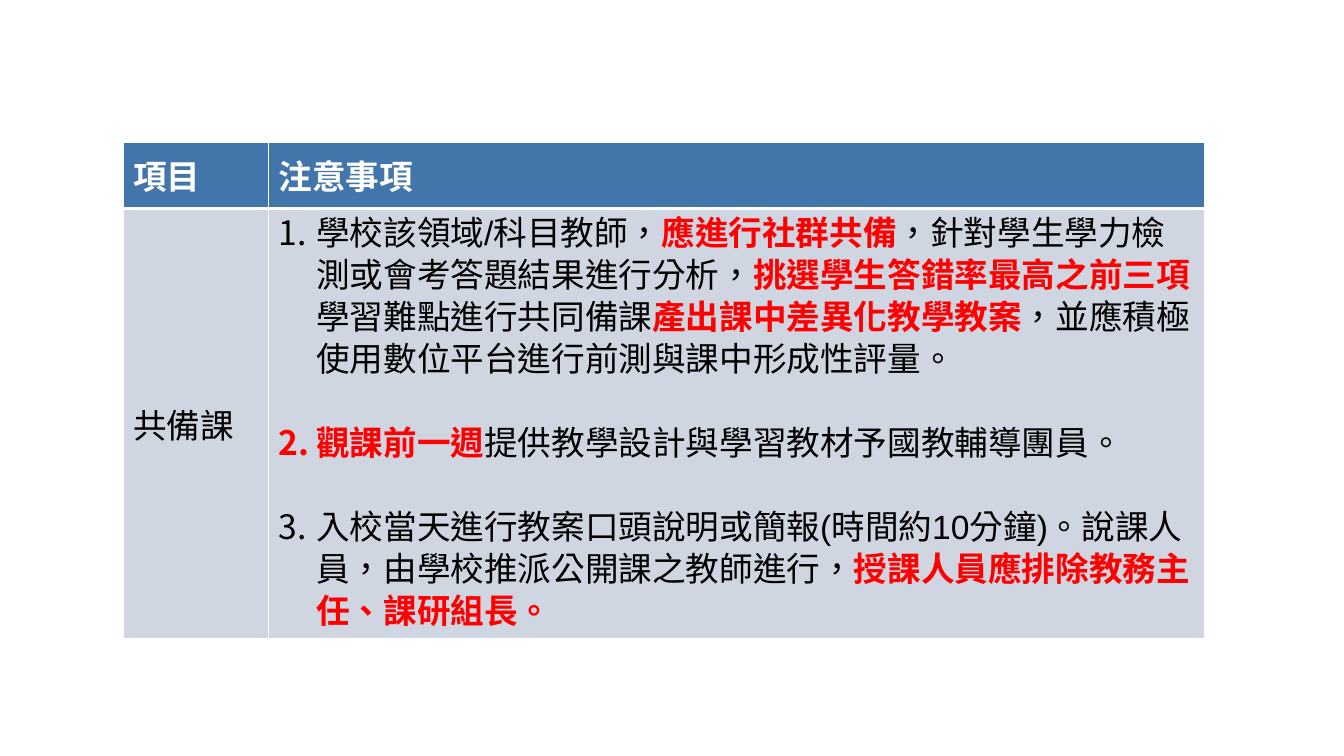
from lxml.etree import SubElement
from pptx import Presentation
from pptx.dml.color import RGBColor as RGB
from pptx.enum.lang import MSO_LANGUAGE_ID as LANG
from pptx.enum.text import MSO_ANCHOR as ANCHOR
from pptx.oxml.ns import qn
from pptx.util import Pt

COLORS = {"header": "4276AA", "body": "CFD6E2", "border": "FFFFFF",
          "white": "FFFFFF", "black": "000000", "red": "FF0000"}
HEADERS = ["項目", "注意事項"]
ITEM = "共備課"
NOTES = [
    [("學校該領域/科目教師，", False), ("應進行社群共備", True),
     ("，針對學生學力檢測或會考答題結果進行分析，", False),
     ("挑選學生答錯率最高之前三項", True), ("學習難點進行共同備課", False),
     ("產出課中差異化教學教案", True),
     ("，並應積極使用數位平台進行前測與課中形成性評量。", False)],
    [("觀課前一週", True), ("提供教學設計與學習教材予國教輔導團員。", False)],
    [("入校當天進行教案口頭說明或簡報(時間約10分鐘)。說課人員，由學校推派公開課之教師進行，", False),
     ("授課人員應排除教務主任、課研組長。", True)],
]
LEFT, TOP = 88, 101.5
COL_WIDTHS = [103.7, 668.8]
ROW_HEIGHTS = [47.5, 307.2]
LINE = 30
INDENT = 27


def add_text(p, text, color="black", bold=False):
    """Add a formatted run to a paragraph."""
    r = p.add_run()
    r.text = text
    r.font.name = "Arial"
    r.font.size = Pt(24)
    r.font.bold = bold
    r.font.color.rgb = RGB.from_string(COLORS[color])
    r.font.language_id = LANG.TRADITIONAL_CHINESE


def style_cell(cell, fill, bottom):
    """Set the borders, fill and anchor of a cell."""
    tcPr = cell._tc.get_or_add_tcPr()
    for side, width in (("L", 1), ("R", 1), ("T", 1), ("B", bottom)):
        ln = SubElement(tcPr, qn(f"a:ln{side}"), w=str(Pt(width)))
        solid = SubElement(ln, qn("a:solidFill"))
        SubElement(solid, qn("a:srgbClr"), val=COLORS["border"])
    cell.fill.solid()
    cell.fill.fore_color.rgb = RGB.from_string(COLORS[fill])
    cell.vertical_anchor = ANCHOR.MIDDLE


def add_notes(tf):
    """Write the numbered notes, one blank line's height apart."""
    for i, note in enumerate(NOTES):
        p = tf.add_paragraph() if i else tf.paragraphs[0]
        pPr = p._p.get_or_add_pPr()
        pPr.set("marL", str(Pt(INDENT)))
        pPr.set("indent", str(-Pt(INDENT)))
        SubElement(pPr, qn("a:buAutoNum"), type="arabicPeriod")
        p.line_spacing = Pt(LINE)
        if i:
            p.space_before = Pt(LINE)
        for text, key in note:
            add_text(p, text, color="red" if key else "black", bold=key)


def main():
    """Build the slide and save it."""
    prs = Presentation()
    prs.slide_width, prs.slide_height = Pt(960), Pt(540)
    s = prs.slides.add_slide(prs.slide_layouts[6])
    table = s.shapes.add_table(2, 2, Pt(LEFT), Pt(TOP), Pt(sum(COL_WIDTHS)),
                               Pt(sum(ROW_HEIGHTS))).table
    for col, width in zip(table.columns, COL_WIDTHS):
        col.width = Pt(width)
    for row, height in zip(table.rows, ROW_HEIGHTS):
        row.height = Pt(height)
    for c, header in enumerate(HEADERS):
        style_cell(table.cell(0, c), "header", 3)
        style_cell(table.cell(1, c), "body", 1)
        add_text(table.cell(0, c).text_frame.paragraphs[0], header,
                 color="white", bold=True)
    add_text(table.cell(1, 0).text_frame.paragraphs[0], ITEM)
    add_notes(table.cell(1, 1).text_frame)
    prs.save("out.pptx")


if __name__ == "__main__":
    main()
